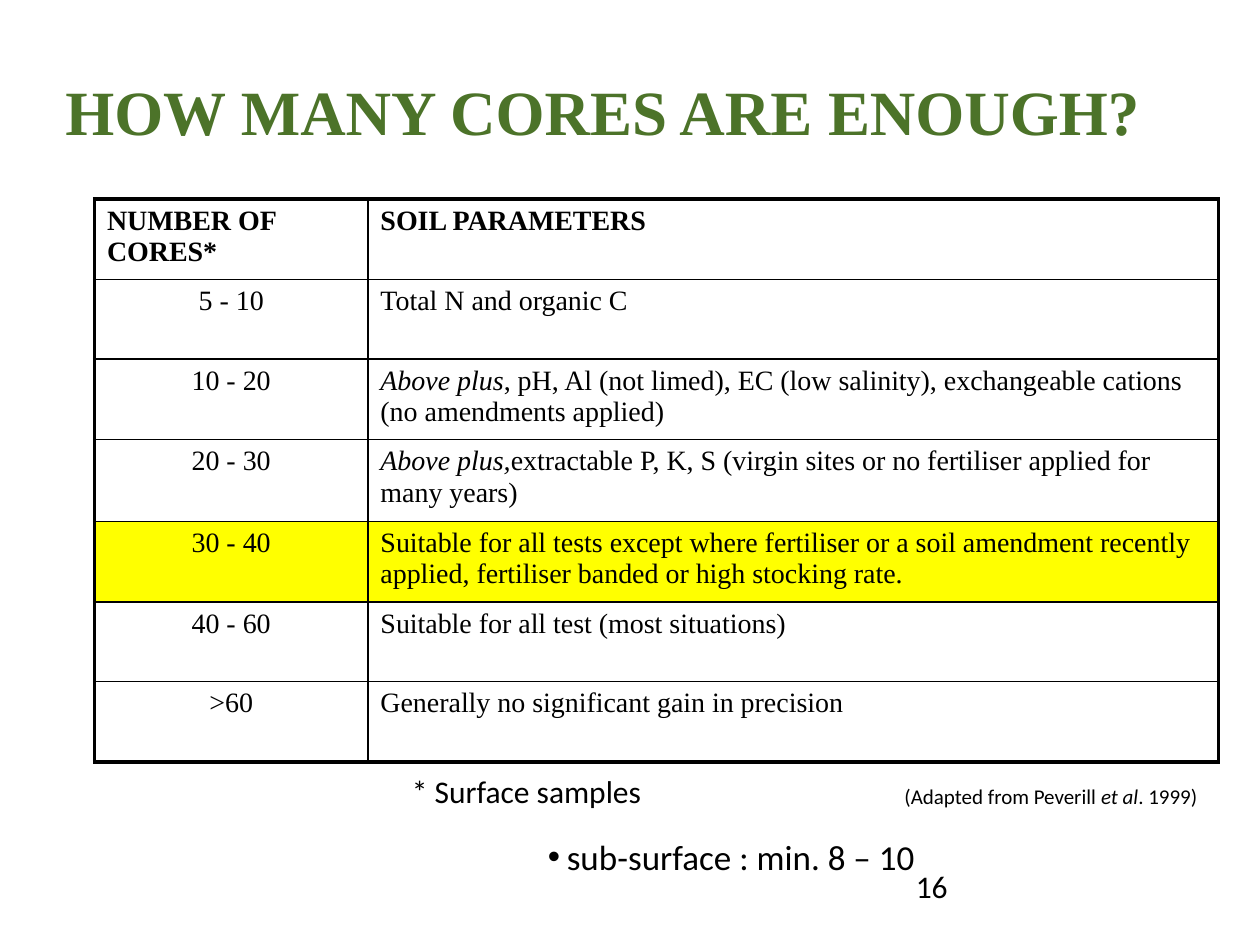
from typing import NamedTuple

from lxml import etree
from pptx import Presentation
from pptx.dml.color import RGBColor
from pptx.enum import text as t
from pptx.oxml import ns
from pptx.util import Inches, Pt

BLACK = RGBColor(0x00, 0x00, 0x00)
GREEN = RGBColor(0x4C, 0x73, 0x29)
YELLOW = RGBColor(0xFF, 0xFF, 0x00)
SERIF = "Times New Roman"
SANS = "Calibri"
THIN, THICK = 1, 2.25


class Run(NamedTuple):
    text: str
    italic: bool = False


class Label(NamedTuple):
    runs: list[Run]
    left: float
    top: float
    width: float
    height: float
    size: float
    font: str = SANS
    color: RGBColor = BLACK
    bold: bool = False
    wrap: bool = False
    anchor: t.MSO_ANCHOR = t.MSO_ANCHOR.TOP
    bullet: str = ""


class CoreRow(NamedTuple):
    cores: str
    parameters: list[Run]
    height: float = 0.64
    header: bool = False
    highlight: bool = False


LABELS = [
    Label([Run("16")], 7.17, 6.83, 2.33, 0.52, 18, wrap=True),
    Label([Run("HOW MANY CORES ARE ENOUGH?")], 0.42, 0.25, 9.25, 1.25, 36, SERIF, GREEN,
          bold=True, wrap=True, anchor=t.MSO_ANCHOR.MIDDLE),
    Label([Run("(Adapted from Peverill "), Run("et al", True), Run(". 1999)")],
          7.08, 6.17, 2.56, 0.3, 12),
    Label([Run("* Surface samples")], 3.17, 6.08, 2.02, 0.4, 18),
    Label([Run("sub-surface : min. 8 – 10")], 4.25, 6.58, 3.12, 0.43, 20, bullet="•"),
]

ROWS = [
    CoreRow("NUMBER OF CORES*", [Run("SOIL PARAMETERS")], header=True),
    CoreRow("5 - 10", [Run("Total N and organic C")], 0.63),
    CoreRow("10 - 20", [Run("Above plus", True), Run(
        ", pH, Al (not limed), EC (low salinity), exchangeable cations (no amendments applied)")]),
    CoreRow("20 - 30", [Run("Above plus,", True), Run(
        "extractable P, K, S (virgin sites or no fertiliser applied for many years)")], 0.65),
    CoreRow("30 - 40", [Run(
        "Suitable for all tests except where fertiliser or a soil amendment recently applied, "
        "fertiliser banded or high stocking rate.")], highlight=True),
    CoreRow("40 - 60", [Run("Suitable for all test (most situations)")], 0.63),
    CoreRow(">60", [Run("Generally no significant gain in precision")]),
]
COLUMN_WIDTHS = [2.17, 6.75]


def write_runs(paragraph, runs: list[Run], size: float, font: str, color: RGBColor,
               bold: bool) -> None:
    for part in runs:
        run = paragraph.add_run()
        run.text = part.text
        run.font.size = Pt(size)
        run.font.name = font
        run.font.color.rgb = color
        run.font.bold = bold
        run.font.italic = part.italic


def add_bullet(paragraph, mark: str) -> None:
    properties = paragraph._p.get_or_add_pPr()
    properties.set("marL", str(Inches(0.15)))
    properties.set("indent", str(-Inches(0.15)))
    etree.SubElement(properties, ns.qn("a:buFont"), typeface="Arial")
    etree.SubElement(properties, ns.qn("a:buChar"), char=mark)


def draw_label(slide, label: Label) -> None:
    box = slide.shapes.add_textbox(Inches(label.left), Inches(label.top),
                                   Inches(label.width), Inches(label.height))
    frame = box.text_frame
    frame.word_wrap = label.wrap
    frame.vertical_anchor = label.anchor
    if not label.wrap:
        frame.auto_size = t.MSO_AUTO_SIZE.SHAPE_TO_FIT_TEXT
    paragraph = frame.paragraphs[0]
    if label.bullet:
        add_bullet(paragraph, label.bullet)
    write_runs(paragraph, label.runs, label.size, label.font, label.color, label.bold)


def set_borders(cell, widths: dict[str, float]) -> None:
    properties = cell._tc.get_or_add_tcPr()
    for position, (side, width) in enumerate(widths.items()):
        line = etree.Element(ns.qn(f"a:ln{side}"), w=str(Pt(width)))
        fill = etree.SubElement(line, ns.qn("a:solidFill"))
        etree.SubElement(fill, ns.qn("a:srgbClr"), val=str(BLACK))
        properties.insert(position, line)


def draw_cores_table(slide, rows: list[CoreRow]) -> None:
    frame = slide.shapes.add_table(
        len(rows), len(COLUMN_WIDTHS), Inches(0.75), Inches(1.58),
        Inches(sum(COLUMN_WIDTHS)), Inches(sum(row.height for row in rows)))
    table = frame.table
    table.first_row = False
    table.horz_banding = False
    for column, width in zip(table.columns, COLUMN_WIDTHS):
        column.width = Inches(width)
    for r, row in enumerate(rows):
        table.rows[r].height = Inches(row.height)
        for c, runs in enumerate([[Run(row.cores)], row.parameters]):
            cell = table.cell(r, c)
            if row.highlight:
                cell.fill.solid()
                cell.fill.fore_color.rgb = YELLOW
            else:
                cell.fill.background()
            paragraph = cell.text_frame.paragraphs[0]
            centred = c == 0 and not row.header
            paragraph.alignment = t.PP_ALIGN.CENTER if centred else t.PP_ALIGN.LEFT
            write_runs(paragraph, runs, 16, SERIF, BLACK, row.header)
            outer = {"L": c == 0, "R": c == len(COLUMN_WIDTHS) - 1,
                     "T": r == 0, "B": r == len(rows) - 1}
            set_borders(cell, {side: THICK if edge else THIN for side, edge in outer.items()})


def main() -> None:
    deck = Presentation()
    deck.slide_width = Inches(10)
    deck.slide_height = Inches(7.5)
    slide = deck.slides.add_slide(deck.slide_layouts[6])
    draw_cores_table(slide, ROWS)
    for label in LABELS:
        draw_label(slide, label)
    deck.save("out.pptx")


if __name__ == "__main__":
    main()
